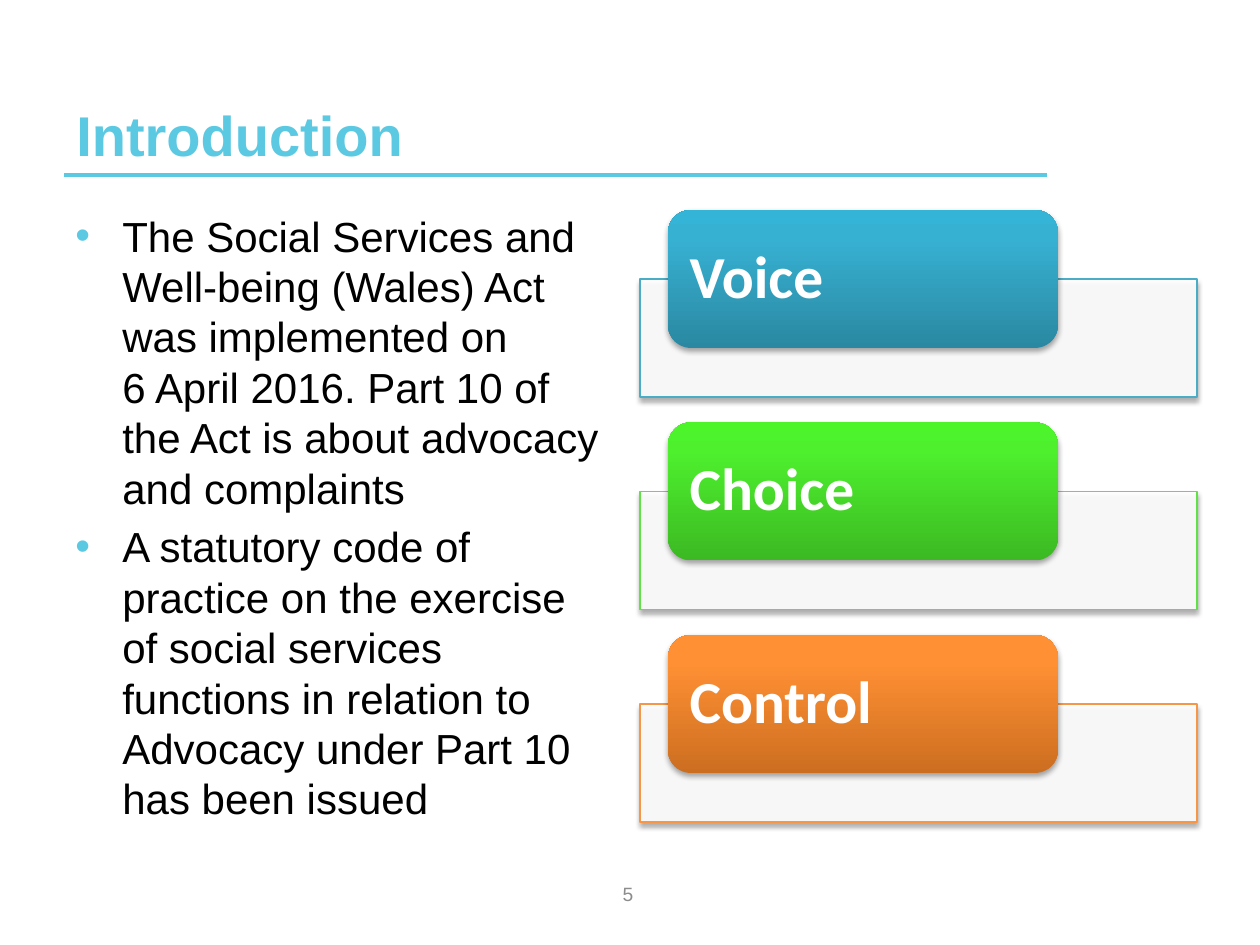
from lxml import etree
from pptx import Presentation, util as u
from pptx.dml.color import RGBColor
from pptx.enum import shapes, text
from pptx.oxml import parse_xml
from pptx.oxml.ns import nsdecls, qn

AQUA = "5CC9E3"
THEMES = [
    ("Voice", "4BACC6", ("2A88A2", "37B1D2", "34B4D6")),
    ("Choice", "60E146", ("3CB923", "4EF02E", "4CF52A")),
    ("Control", "F79646", ("CC6E20", "FF9034", "FF9136")),
]
POINTS = [
    "The Social Services and Well-being (Wales) Act was implemented on \v"
    "6 April 2016. Part 10 of the Act is about advocacy and complaints",
    "A statutory code of practice on the exercise of social services functions "
    "in relation to Advocacy under Part 10 has been issued",
]


def px(length):
    return u.Emu(round(length * 914400 / 126))


def rgb(value):
    return RGBColor.from_string(value)


def style(paragraph, size, color, bold=False, font="Arial"):
    for run in paragraph.runs:
        run.font.name = font
        run.font.size = u.Pt(size)
        run.font.bold = bold
        run.font.color.rgb = rgb(color)


def add_frame(slide, left, top, width, height, anchor):
    frame = slide.shapes.add_textbox(px(left), px(top), px(width), px(height)).text_frame
    frame.word_wrap = True
    frame.vertical_anchor = anchor
    return frame


def add_label(slide, box, anchor, content, size, color, align, bold=False):
    frame = add_frame(slide, *box, anchor)
    frame.text = content
    frame.paragraphs[0].alignment = align
    style(frame.paragraphs[0], size, color, bold)


def add_rule(slide, left, right, y):
    rule = slide.shapes.add_connector(
        shapes.MSO_CONNECTOR.STRAIGHT, px(left), px(y), px(right), px(y))
    rule.line.color.rgb = rgb(AQUA)
    rule.line.width = u.Pt(2)
    etree.SubElement(rule._element.spPr, qn("a:effectLst"))


def add_bullet(paragraph):
    props = paragraph._p.get_or_add_pPr()
    props.set("marL", str(px(47)))
    props.set("indent", str(-px(47)))
    color = etree.SubElement(props, qn("a:buClr"))
    etree.SubElement(color, qn("a:srgbClr"), val=AQUA)
    etree.SubElement(props, qn("a:buFont"), typeface="Arial")
    etree.SubElement(props, qn("a:buChar"), char="•")


def add_points(slide):
    frame = add_frame(slide, 63, 204, 557, 624, text.MSO_ANCHOR.TOP)
    for index, content in enumerate(POINTS):
        point = frame.add_paragraph() if index else frame.paragraphs[0]
        point.text = content
        add_bullet(point)
        point.line_spacing = u.Pt(28.8)
        if index:
            point.space_before = u.Pt(4.8)
        style(point, 24, "000000")


def add_shadow(shape):
    shape._element.spPr.append(parse_xml(
        f'<a:effectLst {nsdecls("a")}><a:outerShdw blurRad="{u.Pt(3.1)}" '
        f'dist="{u.Pt(1.8)}" dir="5400000" rotWithShape="0"><a:srgbClr val="000000">'
        '<a:alpha val="35000"/></a:srgbClr></a:outerShdw></a:effectLst>'))


def add_block(slide, kind, left, top, width, height):
    return slide.shapes.add_shape(kind, px(left), px(top), px(width), px(height))


def add_panel(slide, top, outline):
    panel = add_block(slide, shapes.MSO_SHAPE.RECTANGLE, 640, top, 557, 118)
    panel.fill.solid()
    panel.fill.fore_color.rgb = rgb("FFFFFF")
    white = panel._element.spPr.find(qn("a:solidFill"))[0]
    etree.SubElement(white, qn("a:alpha"), val="90000")
    panel.line.color.rgb = rgb(outline)
    panel.line.width = u.Pt(0.75)
    add_shadow(panel)


def add_tab(slide, top, name, shades):
    tab = add_block(slide, shapes.MSO_SHAPE.ROUNDED_RECTANGLE, 668, top, 390, 138)
    tab.fill.gradient()
    gradient = tab._element.spPr.find(qn("a:gradFill"))
    stops = gradient.find(qn("a:gsLst"))
    for stop in list(stops):
        stops.remove(stop)
    for position, shade in zip((0, 80000, 100000), shades):
        stop = etree.SubElement(stops, qn("a:gs"), pos=str(position))
        etree.SubElement(stop, qn("a:srgbClr"), val=shade)
    gradient.find(qn("a:lin")).set("ang", "16200000")
    tab.line.fill.background()
    add_shadow(tab)
    frame = tab.text_frame
    frame.margin_left = frame.margin_right = px(15)
    frame.margin_top = frame.margin_bottom = 0
    frame.vertical_anchor = text.MSO_ANCHOR.MIDDLE
    frame.text = name
    frame.paragraphs[0].alignment = text.PP_ALIGN.LEFT
    frame.paragraphs[0].line_spacing = 0.9
    style(frame.paragraphs[0], 34, "FFFFFF", True, "Calibri")


def main():
    deck = Presentation()
    deck.slide_width, deck.slide_height = px(1260), px(945)
    slide = deck.slides.add_slide(deck.slide_layouts[6])
    add_rule(slide, 64, 1047, 175)
    add_label(slide, (64, 37, 983, 137), text.MSO_ANCHOR.BOTTOM,
              "Introduction", 32, AQUA, text.PP_ALIGN.LEFT, True)
    add_points(slide)
    for index, (name, outline, shades) in enumerate(THEMES):
        top = 210 + index * 212.5
        add_panel(slide, top + 69, outline)
        add_tab(slide, top, name, shades)
    add_label(slide, (481, 869, 294, 50), text.MSO_ANCHOR.MIDDLE,
              "5", 11, "8C8C8C", text.PP_ALIGN.CENTER)
    deck.save("out.pptx")


if __name__ == "__main__":
    main()
